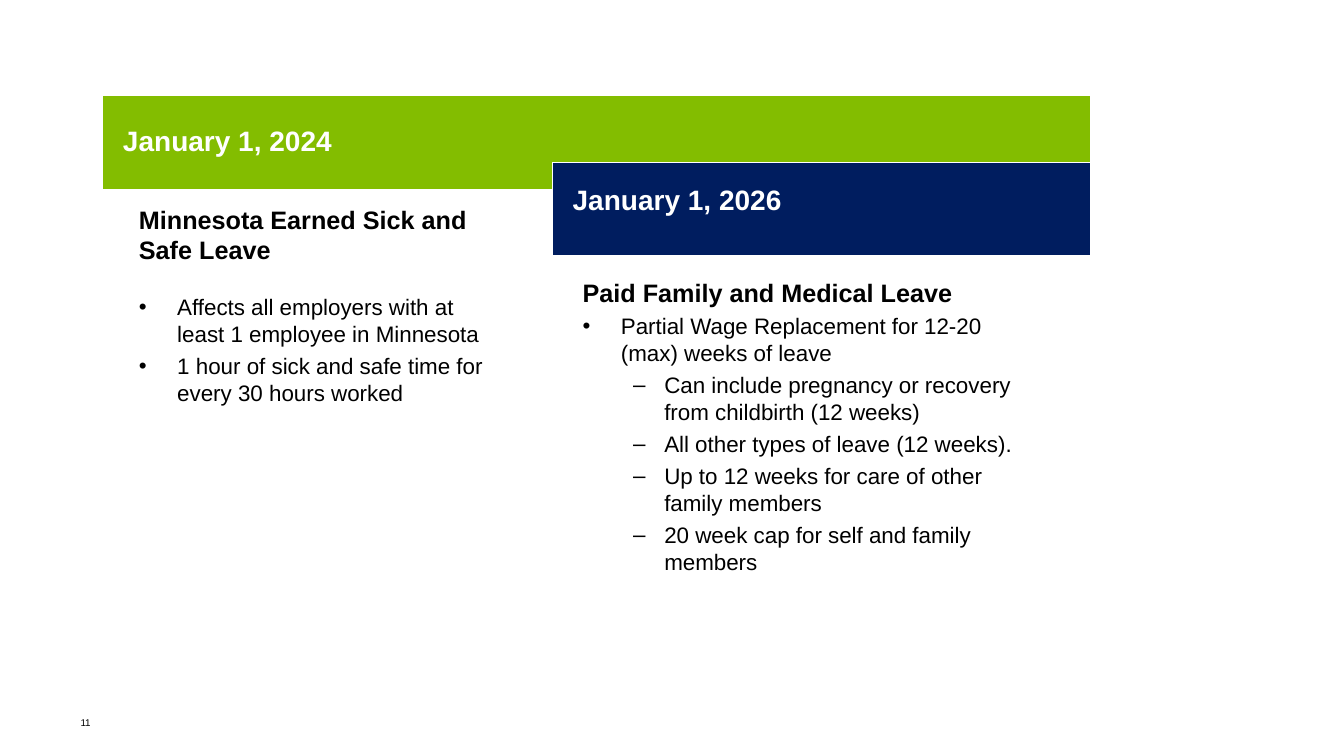
"""Build a slide that sets two Minnesota leave laws side by side by start date."""
from pptx import Presentation
from pptx.dml.color import RGBColor as Rgb
from pptx.enum.shapes import MSO_SHAPE as Shape
from pptx.util import Inches as In, Pt
from lxml.etree import SubElement as Sub
from pptx.oxml.ns import qn

HUES = {"green": "83BD00", "navy": "001D5F", "white": "FFFFFF", "black": "000000"}
MARKS = {1: ("•", 0.38, 0.38), 2: ("–", 0.81, 0.31)}

deck = Presentation()
deck.slide_width, deck.slide_height = In(13.33), In(7.5)
slide = deck.slides.add_slide(deck.slide_layouts[6])


def write(rows, left, top, wide, high, size=16, hue="black", bold=False, pad=(0.1, 0.05)):
    """Add a text box; each row is text, bullet depth and space before."""
    box = slide.shapes.add_textbox(In(left), In(top), In(wide), In(high))
    frame = box.text_frame
    frame.word_wrap = True
    frame.margin_left = frame.margin_right = In(pad[0])
    frame.margin_top = frame.margin_bottom = In(pad[1])
    for i, (text, depth, gap) in enumerate(rows):
        para = frame.add_paragraph() if i else frame.paragraphs[0]
        if depth:
            mark, start, hang = MARKS[depth]
            para.level = depth - 1
            props = para._p.get_or_add_pPr()
            props.set("marL", str(In(start)))
            props.set("indent", str(-In(hang)))
            Sub(props, qn("a:buFont")).set("typeface", "Arial")
            Sub(props, qn("a:buChar")).set("char", mark)
        para.space_before = Pt(gap)
        run = para.add_run()
        run.text = text
        head = len(rows) > 1 and not depth
        font = run.font
        font.name, font.size, font.bold = "Arial", Pt(18 if head else size), bold or head
        font.color.rgb = Rgb.from_string(HUES[hue])


GAP = 3.7
write([("11", 0, 0)], 0.7, 7.06, 2.89, 0.22, size=7)
write([
    ("Minnesota Earned Sick and Safe Leave", 0, 0),
    ("Affects all employers with at least 1 employee in Minnesota", 1, 20.2),
    ("1 hour of sick and safe time for every 30 hours worked", 1, GAP),
], 1.28, 1.98, 3.8, 2.13)
write([
    ("Paid Family and Medical Leave", 0, 0),
    ("Partial Wage Replacement for 12-20 (max) weeks of leave", 1, GAP),
    ("Can include pregnancy or recovery from childbirth (12 weeks)", 2, GAP),
    ("All other types of leave (12 weeks).", 2, GAP),
    ("Up to 12 weeks for care of other family members", 2, GAP),
    ("20 week cap for self and family members", 2, GAP),
], 5.68, 2.7, 4.61, 3.1)

RIGHT = 10.82
for hue, left, top, date, x, y in (
    ("green", 1.01, 0.95, "January 1, 2024", 1.22, 1.23),
    ("navy", 5.48, 1.61, "January 1, 2026", 5.68, 1.81),
):
    band = slide.shapes.add_shape(Shape.RECTANGLE, In(left), In(top), In(RIGHT - left), In(0.93))
    band.shadow.inherit = False
    band.fill.solid()
    band.fill.fore_color.rgb = Rgb.from_string(HUES[hue])
    band.line.color.rgb = Rgb.from_string(HUES["white"])
    band.line.width = Pt(1)
    write([(date, 0, 0)], x, y, 3.8, 0.34, size=20, hue="white", bold=True, pad=(0, 0))

deck.save("out.pptx")
